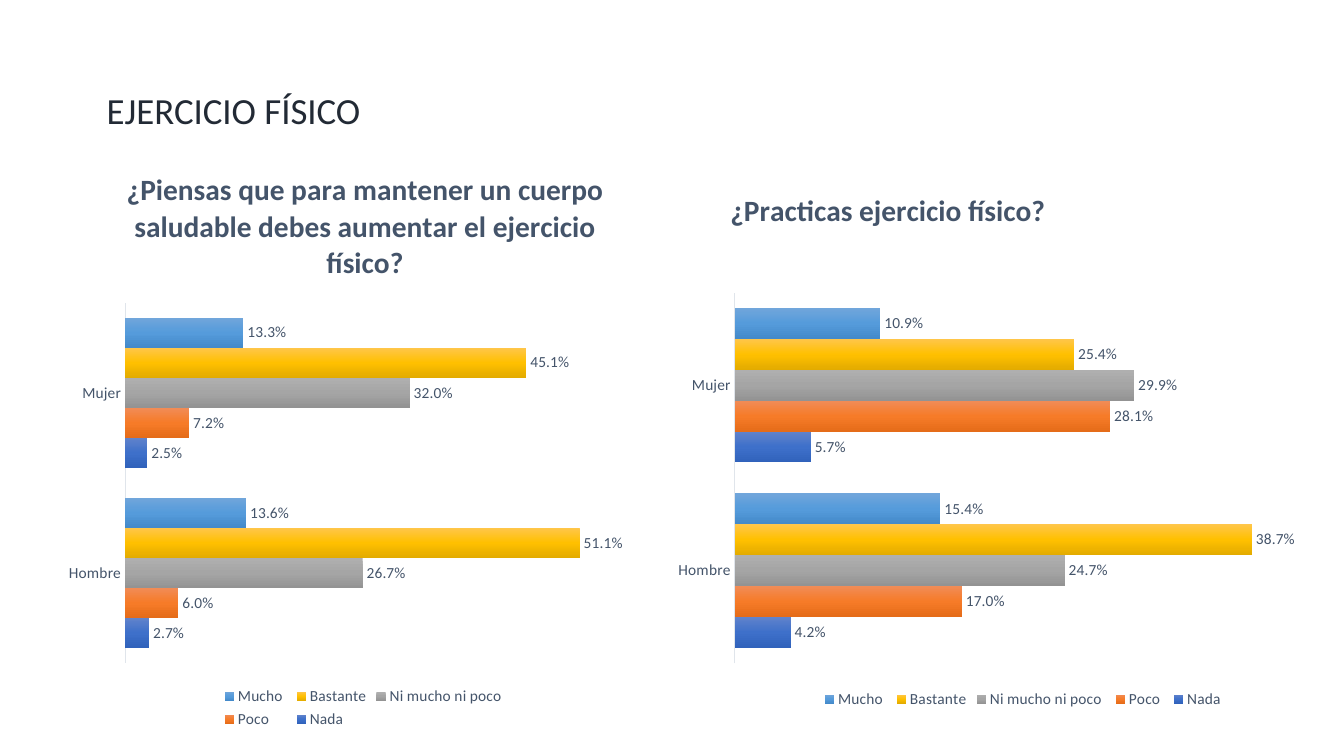
"""Build the slide EJERCICIO FÍSICO with two bar charts by sex."""
import copy

import pptx
import pptx.chart.data
import pptx.dml.color
import pptx.enum.chart
import pptx.oxml
import pptx.oxml.ns
import pptx.util

Inches = pptx.util.Inches
Pt = pptx.util.Pt
qn = pptx.oxml.ns.qn

FONT = "Calibri"
PERCENT = "###0.0%"
COLORS = {"heading": "222A35", "label": "44546A", "axis": "E0E5EB"}
GRADIENTS = {
    "Nada": ("6183CB", "3E70CA", "3062BB"),
    "Poco ": ("F18C57", "F67B28", "E56C19"),
    "Ni mucho ni poco ": ("AFAFAF", "A5A5A5", "939393"),
    "Bastante": ("FFC64B", "FFC000", "E3AB00"),
    "Mucho ": ("71A6DB", "559BDB", "448ACA"),
}
CHARTS = [
    {
        "title": "¿Piensas que para mantener un cuerpo saludable debes aumentar el ejercicio físico?",
        "box": (0.57, 1.45, 6.1, 5.82),
        "title_layout": None,
        "plot_layout": {"x": 0.11, "y": 0.267, "w": 0.868, "h": 0.614},
        "maximum": 0.6,
        "Hombre": (0.027, 0.06, 0.267, 0.511, 0.136),
        "Mujer": (0.025, 0.072, 0.32, 0.451, 0.133),
    },
    {
        "title": "¿Practicas ejercicio físico?",
        "box": (6.48, 1.25, 7.33, 5.82),
        "title_layout": {"x": 0.097, "y": 0.1},
        "plot_layout": {"x": 0.11, "y": 0.284, "w": 0.814, "h": 0.632},
        "maximum": 0.45,
        "Hombre": (0.042, 0.17, 0.247, 0.387, 0.154),
        "Mujer": (0.057, 0.281, 0.299, 0.254, 0.109),
    },
]


def style_font(font, size, color, bold=False):
    font.name = FONT
    font.size = Pt(size)
    font.bold = bold
    font.color.rgb = pptx.dml.color.RGBColor.from_string(COLORS[color])


def set_layout(parent, index, values):
    for layout in parent.findall(qn("c:layout")):
        parent.remove(layout)
    modes = {"xMode": "edge", "yMode": "edge"}
    if "w" in values:
        modes = {"layoutTarget": "inner", **modes}
    settings = "".join(f'<c:{tag} val="{value}"/>' for tag, value in {**modes, **values}.items())
    namespace = pptx.oxml.ns.nsdecls("c")
    xml = f"<c:layout {namespace}><c:manualLayout>{settings}</c:manualLayout></c:layout>"
    parent.insert(index, pptx.oxml.parse_xml(xml))


presentation = pptx.Presentation()
presentation.slide_width = Inches(13.33)
presentation.slide_height = Inches(7.5)
slide = presentation.slides.add_slide(presentation.slide_layouts[6])

for question in CHARTS:
    chart_data = pptx.chart.data.CategoryChartData(number_format=PERCENT)
    chart_data.categories = ["Hombre", "Mujer"]
    for name, men, women in zip(GRADIENTS, question["Hombre"], question["Mujer"]):
        chart_data.add_series(name, (men, women))
    chart = slide.shapes.add_chart(
        pptx.enum.chart.XL_CHART_TYPE.BAR_CLUSTERED,
        *map(Inches, question["box"]),
        chart_data,
    ).chart
    style_font(chart.font, 11, "label")

    chart.has_title = True
    title_frame = chart.chart_title.text_frame
    title_frame.text = question["title"]
    style_font(title_frame.paragraphs[0].runs[0].font, 21, "label", bold=True)
    if question["title_layout"]:
        set_layout(chart.chart_title._element, 1, question["title_layout"])
    set_layout(chart._chartSpace.chart.plotArea, 0, question["plot_layout"])

    chart.has_legend = True
    chart.legend.position = pptx.enum.chart.XL_LEGEND_POSITION.BOTTOM
    chart.legend.include_in_layout = False
    style_font(chart.legend.font, 11, "label")

    category_axis = chart.category_axis
    category_axis.major_tick_mark = pptx.enum.chart.XL_TICK_MARK.NONE
    category_axis.format.line.width = Pt(0.75)
    category_axis.format.line.color.rgb = pptx.dml.color.RGBColor.from_string(COLORS["axis"])
    style_font(category_axis.tick_labels.font, 11, "label")
    value_axis = chart.value_axis
    value_axis.minimum_scale = 0
    value_axis.maximum_scale = question["maximum"]
    value_axis.has_major_gridlines = False
    value_axis.visible = False

    plot = chart.plots[0]
    plot.gap_width = 100
    plot.vary_by_categories = False
    for series, gradient in zip(plot.series, GRADIENTS.values()):
        fill = series.format.fill
        fill.gradient()
        fill.gradient_angle = 270
        stop_list = next(series._element.iter(qn("a:gsLst")))
        stop_list.append(copy.deepcopy(stop_list[-1]))
        for stop, position, color in zip(fill.gradient_stops, (0, 0.5, 1), gradient):
            stop.position = position
            stop.color.rgb = pptx.dml.color.RGBColor.from_string(color)
        labels = series.data_labels
        labels.show_value = True
        labels.number_format = PERCENT
        labels.number_format_is_linked = False
        labels.position = pptx.enum.chart.XL_LABEL_POSITION.OUTSIDE_END
        style_font(labels.font, 11, "label")

heading = slide.shapes.add_textbox(Inches(0.96), Inches(0.87), Inches(11.81), Inches(0.76))
heading.text_frame.word_wrap = True
heading.text_frame.text = "EJERCICIO FÍSICO"
paragraph = heading.text_frame.paragraphs[0]
paragraph.line_spacing = 0.9
style_font(paragraph.runs[0].font, 26.3, "heading")

presentation.save("out.pptx")
